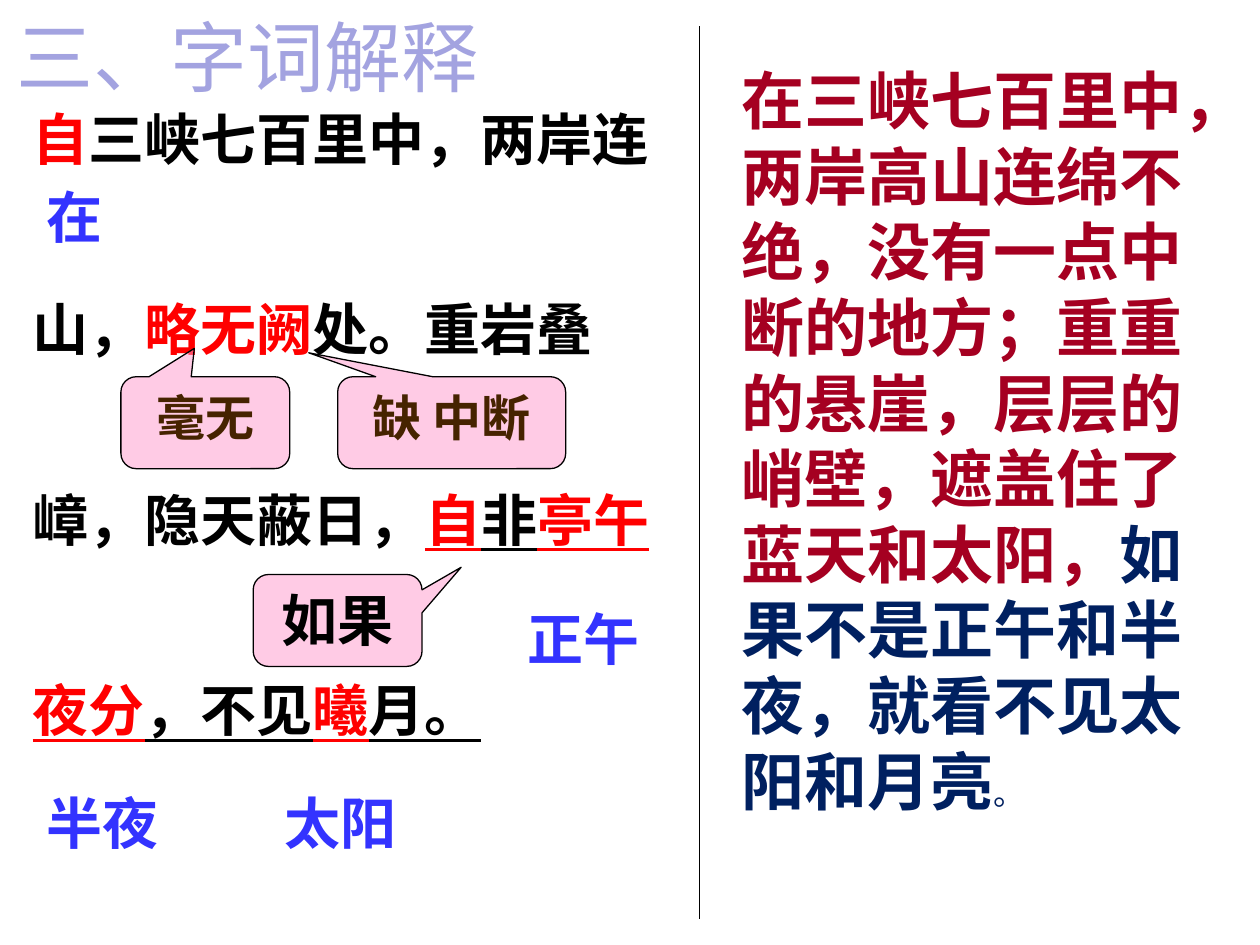
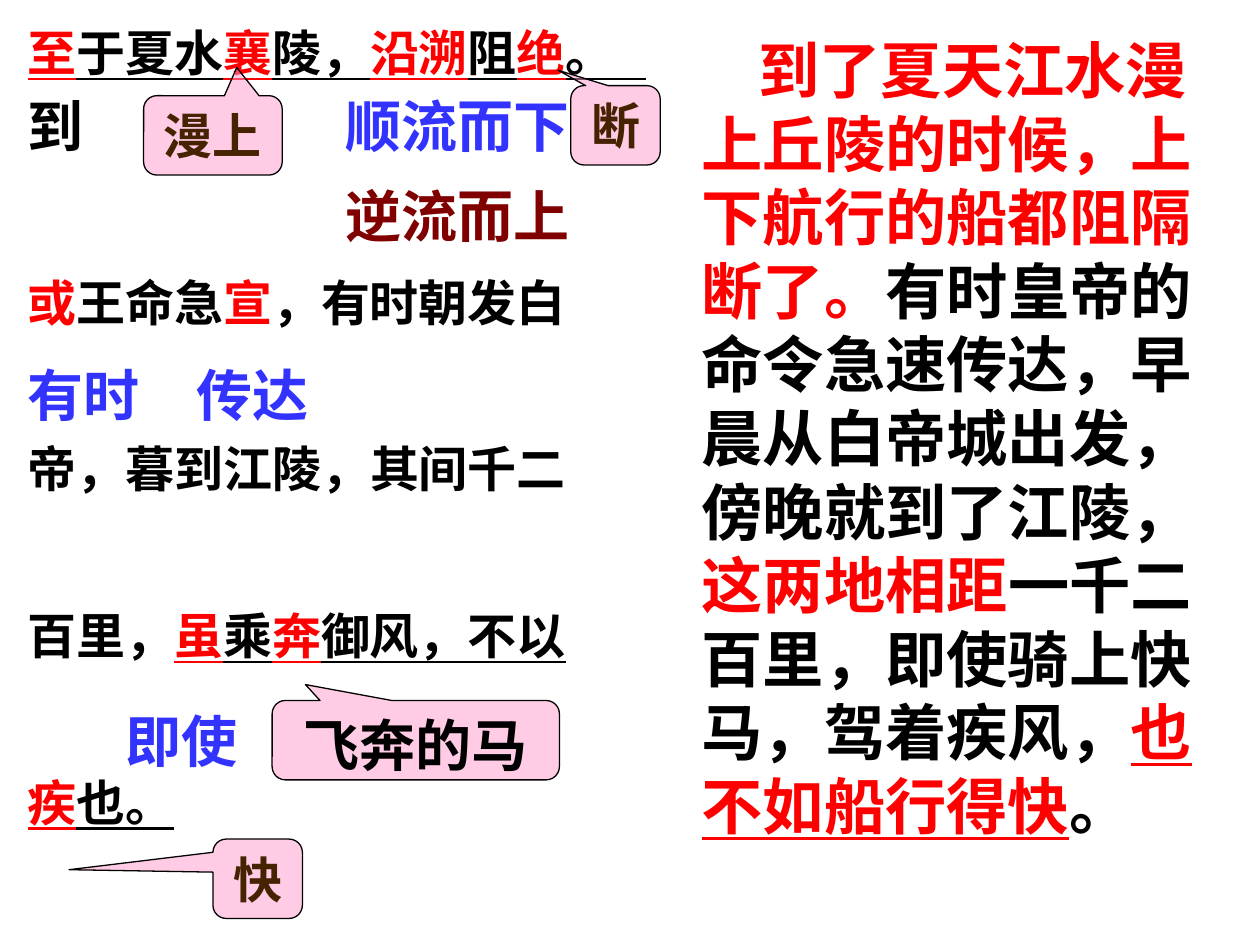
"""Build two slides that gloss a classical Chinese passage beside its translation."""
from lxml.etree import SubElement
from pptx import Presentation
from pptx.dml.color import RGBColor
from pptx.enum.shapes import MSO_CONNECTOR, MSO_SHAPE
from pptx.enum.text import MSO_ANCHOR, PP_ALIGN
from pptx.oxml.ns import qn
from pptx.util import Inches, Pt

BLACK, RED, BLUE = "000000", "FF0000", "3333FF"
BROWN, MAROON, PINK = "462300", "800000", "FF99CC"
CRIMSON, NAVY, LAVENDER = "A50021", "002060", "A3A3E0"
CHINESE_FONT = "Noto Sans CJK SC"
LINE_HEIGHT, LINE_STEP = 1.2, 1.7


def color(hex_value):
    return RGBColor.from_string(hex_value)


def write_text(shape, lines, size, font="Arial", bold=True, align=PP_ALIGN.LEFT):
    frame = shape.text_frame
    frame.word_wrap = True
    frame.vertical_anchor = MSO_ANCHOR.TOP
    for index, (steps, runs) in enumerate(lines):
        paragraph = frame.add_paragraph() if index else frame.paragraphs[0]
        paragraph.alignment = align
        paragraph.line_spacing = Pt(size * LINE_HEIGHT)
        if steps:
            paragraph.space_before = Pt(size * (steps * LINE_STEP - LINE_HEIGHT))
        paragraph.font.size = Pt(size)
        paragraph.font.bold = bold
        paragraph.font.name = font
        defaults = paragraph._p.pPr.find(qn("a:defRPr"))
        SubElement(defaults, qn("a:ea")).set("typeface", CHINESE_FONT)
        for text, hex_value, *underlined in runs:
            run = paragraph.add_run()
            run.text = text
            run.font.color.rgb = color(hex_value)
            if underlined:
                run.font.underline = True
    return frame


passages = [
    ((0.16, 0.78, 5.28, 5.44), 32, "Arial", [
        (0, [("自", RED), ("三峡七百里中，两岸连", BLACK)]),
        (2, [("山，", BLACK), ("略无阙", RED), ("处。重岩叠", BLACK)]),
        (2, [("嶂，隐天蔽日，", BLACK), ("自", RED, True), ("非", BLACK, True),
             ("亭午", RED, True)]),
        (2, [("夜分", RED, True), ("，不见", BLACK, True), ("曦", RED, True),
             ("月。", BLACK, True)]),
    ]),
    ((0.12, 0.13, 4.72, 6.88), 28, CHINESE_FONT, [
        (0, [("至", RED, True), ("于夏水", BLACK, True), ("襄", RED, True),
             ("陵，", BLACK, True), ("沿溯", RED, True), ("阻", BLACK, True),
             ("绝", RED, True), ("。", BLACK, True)]),
        (3, [("或", RED), ("王命急", BLACK), ("宣", RED), ("，有时朝发白", BLACK)]),
        (2, [("帝，暮到江陵，其间千二", BLACK)]),
        (2, [("百里，", BLACK), ("虽", RED, True), ("乘", BLACK, True),
             ("奔", RED, True), ("御风，不以", BLACK, True)]),
        (2, [("疾", RED, True), ("也。", BLACK, True)]),
    ]),
]

glosses = [
    [("在", 0.27, 1.4, 0.87, BLUE), ("正午", 4.09, 4.75, 1.58, BLUE),
     ("半夜", 0.27, 6.21, 1.1, BLUE), ("太阳", 2.16, 6.21, 1.26, BLUE)],
    [("到", 0.12, 0.68, 0.94, BLACK), ("顺流而下", 2.64, 0.68, 2.05, BLUE),
     ("逆流而上", 2.64, 1.39, 2.2, MAROON), ("有时", 0.12, 2.81, 1.34, BLUE),
     ("传达", 1.46, 2.81, 1.57, BLUE), ("即使", 0.9, 5.56, 1.09, BLUE)],
]

brown_style = (28, "Times New Roman", BROWN)
black_style = (32, "Arial", BLACK)
callouts = [
    (0.73, [("毫无", 0.96, 2.99, 1.34, (-0.065, -0.808), brown_style),
            ("缺 中断", 2.68, 2.99, 1.81, (-0.627, -0.76), brown_style),
            ("如果", 2.01, 4.56, 1.34, (0.732, -0.579), black_style)]),
    (0.63, [("漫上", 1.14, 0.76, 1.1, (0.172, -0.855), brown_style),
            ("断", 4.53, 0.68, 0.71, (-0.64, -0.693), brown_style),
            ("飞奔的马", 2.16, 5.56, 2.28, (-0.384, -0.701), black_style),
            ("快", 1.69, 6.66, 0.71, (-2.11, -0.114), brown_style)]),
]

translations = [
    ((5.79, 0.44, 3.86, 6.11), 36, [
        ("在三峡七百里中，两岸高山连绵不绝，没有一点中断的地方；"
         "重重的悬崖，层层的峭壁，遮盖住了蓝天和太阳，", CRIMSON),
        ("如果不是正午和半夜，就看不见太阳和月亮", NAVY), ("。", NAVY)]),
    ((5.47, 0.21, 4.17, 6.52), 35, [
        ("到了夏天江水漫上丘陵的时候，上下航行的船都阻隔断了。", RED),
        ("有时皇帝的命令急速传达，早晨从白帝城出发，傍晚就到了江陵，", BLACK),
        ("这两地相距", RED), ("一千二百里，即使骑上快马，驾着疾风，", BLACK),
        ("也不如船行得快", RED, True), ("。", BLACK)]),
]

presentation = Presentation()
presentation.slide_width, presentation.slide_height = Inches(10), Inches(7.5)
slides = []
translation_paragraphs = []

for passage, gloss_group, callout_group, translation in zip(
        passages, glosses, callouts, translations):
    slide = presentation.slides.add_slide(presentation.slide_layouts[6])
    slides.append(slide)

    box, size, font, lines = passage
    write_text(slide.shapes.add_textbox(*map(Inches, box)), lines, size, font)

    for text, left, top, width, hex_value in gloss_group:
        gloss = slide.shapes.add_textbox(*map(Inches, (left, top, width, 0.63)))
        write_text(gloss, [(0, [(text, hex_value)])], 32)

    height, callout_list = callout_group
    for text, left, top, width, tip, (size, font, hex_value) in callout_list:
        callout = slide.shapes.add_shape(
            MSO_SHAPE.ROUNDED_RECTANGULAR_CALLOUT,
            *map(Inches, (left, top, width, height)))
        callout.adjustments[0], callout.adjustments[1] = tip
        callout.shadow.inherit = False
        callout.fill.solid()
        callout.fill.fore_color.rgb = color(PINK)
        fill_color = callout._element.spPr.find(qn("a:solidFill")).find(qn("a:srgbClr"))
        SubElement(fill_color, qn("a:alpha")).set("val", "50000")
        callout.line.color.rgb = color(BLACK)
        callout.line.width = Pt(0.75)
        write_text(callout, [(0, [(text, hex_value)])], size, font,
                   align=PP_ALIGN.CENTER)

    box, size, runs = translation
    frame = write_text(slide.shapes.add_textbox(*map(Inches, box)), [(0, runs)], size)
    translation_paragraphs.append(frame.paragraphs[0])

full_stop = translation_paragraphs[0].runs[-1]
full_stop.font.size = Pt(18)
full_stop.font.bold = False
translation_paragraphs[1]._p.pPr.set("indent", str(Inches(0.45)))

divider = slides[0].shapes.add_connector(
    MSO_CONNECTOR.STRAIGHT, *map(Inches, (5.55, 0.21, 5.55, 7.29)))
divider.line.color.rgb = color(BLACK)
divider.line.width = Pt(0.75)
SubElement(divider._element.spPr, qn("a:effectLst"))

title = slides[0].shapes.add_textbox(*map(Inches, (0.03, -0.02, 4.25, 0.92)))
title_frame = write_text(title, [(0, [("三、字词解释", LAVENDER)])], 44, bold=False)
title_frame.vertical_anchor = MSO_ANCHOR.MIDDLE
title_frame.paragraphs[0].line_spacing = None

presentation.save("out.pptx")
